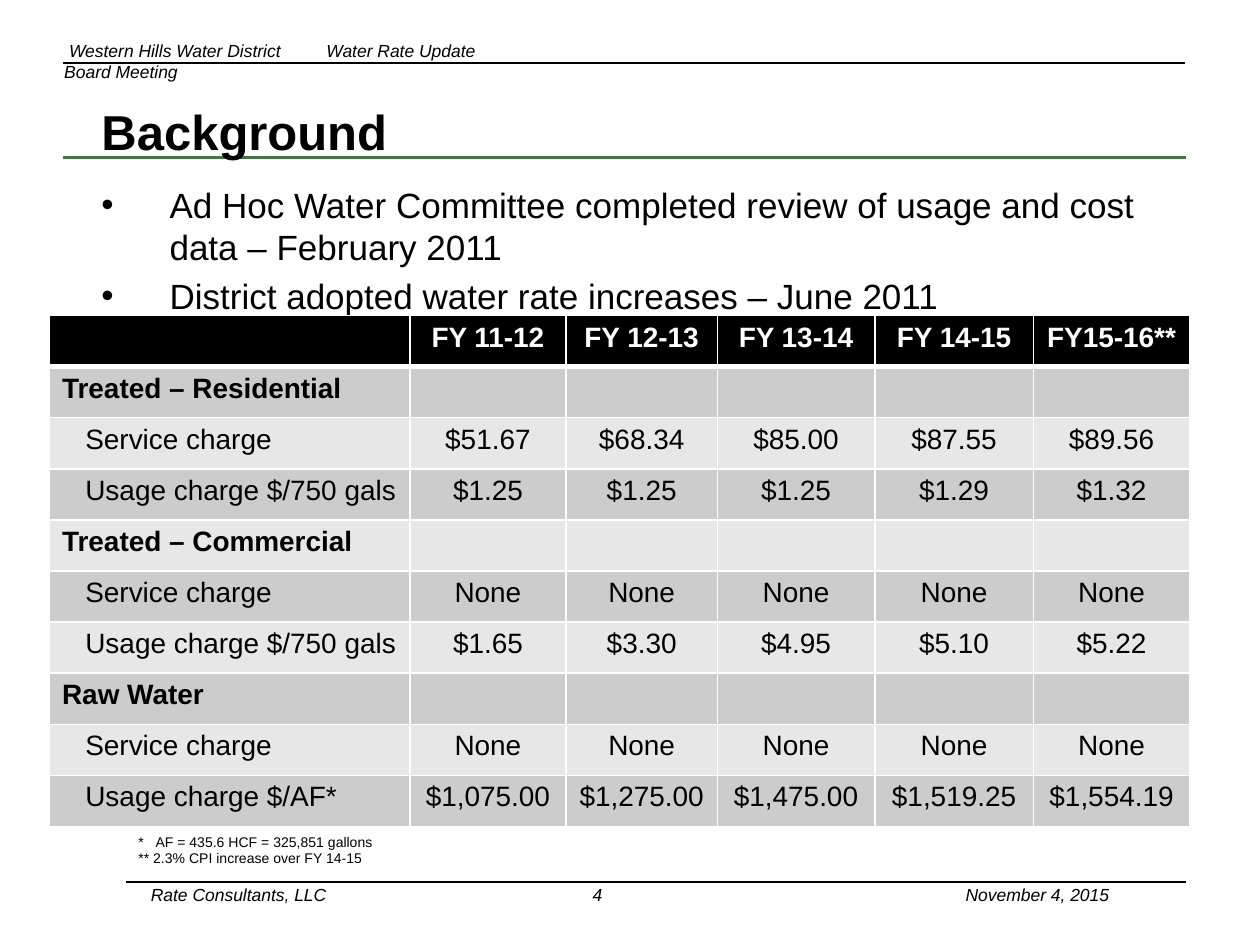
from lxml.etree import SubElement
from pptx import Presentation
from pptx.dml.color import RGBColor
from pptx.enum.shapes import MSO_CONNECTOR
from pptx.enum.text import MSO_ANCHOR, MSO_AUTO_SIZE, PP_ALIGN
from pptx.oxml.ns import qn
from pptx.util import Pt

BLACK, WHITE, GREEN = "000000", "FFFFFF", "487248"
DARK_BAND, LIGHT_BAND = "CCCCCC", "E7E7E7"


def rgb(color):
    return RGBColor.from_string(color)


def write(p, text, size=16, color=BLACK, bold=False, italic=False,
          align=PP_ALIGN.LEFT, before=0, bullet=None, hang=0, tabs=()):
    """Fill one paragraph with formatted text."""
    p.alignment = align
    p.space_before = Pt(before)
    pPr = p._p.get_or_add_pPr()
    if bullet:
        pPr.set("marL", str(Pt(hang)))
        pPr.set("indent", str(-Pt(hang)))
        SubElement(pPr, qn("a:buChar"), char=bullet)
    if tabs:
        tab_list = SubElement(pPr, qn("a:tabLst"))
        for pos in tabs:
            SubElement(tab_list, qn("a:tab"), pos=str(Pt(pos)), algn="l")
    r = p.add_run()
    r.text = text
    r.font.name = "Arial"
    r.font.size = Pt(size)
    r.font.bold = bold
    r.font.italic = italic
    r.font.color.rgb = rgb(color)


class Deck:
    """Holds the presentation, its style and the current slide."""

    def __init__(self, width, height):
        self.prs = Presentation()
        self.prs.slide_width, self.prs.slide_height = Pt(width), Pt(height)
        self.s = None

    def add_slide(self):
        self.s = self.prs.slides.add_slide(self.prs.slide_layouts[1])

    def fill_frame(self, tf, lines, insets, anchor, **fmt):
        tf.word_wrap = True
        tf.auto_size = MSO_AUTO_SIZE.NONE
        tf.vertical_anchor = anchor
        tf.margin_left, tf.margin_top, tf.margin_right, tf.margin_bottom = map(Pt, insets)
        before = fmt.pop("before", 0)
        for i, line in enumerate(lines):
            p = tf.add_paragraph() if i else tf.paragraphs[0]
            write(p, line, before=before if i else 0, **fmt)

    def text(self, box, lines, insets, **fmt):
        sp = self.s.shapes.add_textbox(*map(Pt, box))
        self.fill_frame(sp.text_frame, lines, insets, MSO_ANCHOR.TOP, **fmt)

    def placeholder(self, idx, box, lines, insets, anchor=MSO_ANCHOR.TOP, **fmt):
        sp = self.s.placeholders[idx]
        sp.left, sp.top, sp.width, sp.height = map(Pt, box)
        self.fill_frame(sp.text_frame, lines, insets, anchor, **fmt)
        # Bring in front of the rules already drawn
        sp._element.getparent().append(sp._element)

    def rule(self, left, right, y, color=BLACK, width=0.75):
        line = self.s.shapes.add_connector(
            MSO_CONNECTOR.STRAIGHT, Pt(left), Pt(y), Pt(right), Pt(y))
        line.line.color.rgb = rgb(color)
        line.line.width = Pt(width)
        SubElement(line._element.spPr, qn("a:effectLst"))

    def borders(self, cell, top=1, bottom=1):
        tcPr = cell._tc.get_or_add_tcPr()
        for side, width in (("L", 1), ("R", 1), ("T", top), ("B", bottom)):
            ln = SubElement(tcPr, qn("a:ln" + side), w=str(Pt(width)))
            fill = SubElement(ln, qn("a:solidFill"))
            SubElement(fill, qn("a:srgbClr"), val=WHITE)

    def table(self, left, top, widths, row_height, rows):
        height = row_height * len(rows)
        frame = self.s.shapes.add_table(
            len(rows), len(widths), Pt(left), Pt(top), Pt(sum(widths)), Pt(height))
        table = frame.table
        table.horz_banding = False
        for column, width in zip(table.columns, widths):
            column.width = Pt(width)
        for i, values in enumerate(rows):
            table.rows[i].height = Pt(row_height)
            header, section = i == 0, len(values) == 1
            band = BLACK if header else DARK_BAND if i % 2 else LIGHT_BAND
            for j in range(len(widths)):
                cell = table.cell(i, j)
                self.borders(cell, top=3 if i == 1 else 1, bottom=3 if header else 1)
                cell.fill.solid()
                cell.fill.fore_color.rgb = rgb(band)
                if j == 0 and not header and not section:
                    cell.margin_left, cell.margin_right = Pt(20.5), Pt(2)
                if j < len(values) and values[j]:
                    write(cell.text_frame.paragraphs[0], values[j],
                          color=WHITE if header else BLACK, bold=header or section,
                          align=PP_ALIGN.CENTER if j else PP_ALIGN.LEFT)


def main():
    deck = Deck(720, 540)
    deck.add_slide()

    # Running header and footer with their rules
    deck.text((18, 18, 672, 34.5), [" Western Hills Water District\tWater Rate Update", "Board Meeting"],
              (18.7, 5, 10, 5), size=10, italic=True, tabs=[149.8])
    deck.rule(36, 678, 90, GREEN, 2.25)
    deck.rule(36, 677, 36)
    deck.rule(72, 678, 504)
    deck.text((30, 500, 661, 22), ["Rate Consultants, LLC\t4\tNovember 4, 2015"],
              (56.2, 5, 10, 5), size=10, italic=True, tabs=[252.5, 465.6])

    # Title and bullets
    deck.placeholder(0, (48, 54, 612, 42), ["Background"], (10, 5, 10, 5),
                     anchor=MSO_ANCHOR.MIDDLE, size=28, bold=True)
    deck.placeholder(1, (48, 96, 612, 102), [
        "Ad Hoc Water Committee completed review of usage and cost data – February 2011",
        "District adopted water rate increases – June 2011",
    ], (10, 9, 10, 5), size=20, before=4, bullet="•", hang=38.9)

    # Rate table: a row with one value is a section heading
    no_charge = ["Service charge"] + ["None"] * 5
    deck.table(28.3, 180.3, [205.9, 89.3, 86.4, 90, 90.7, 89.3], 29.2, [
        ["", "FY 11-12", "FY 12-13", "FY 13-14", "FY 14-15", "FY15-16**"],
        ["Treated – Residential"],
        ["Service charge", "$51.67", "$68.34", "$85.00", "$87.55", "$89.56"],
        ["Usage charge $/750 gals", "$1.25", "$1.25", "$1.25", "$1.29", "$1.32"],
        ["Treated – Commercial"],
        no_charge,
        ["Usage charge $/750 gals", "$1.65", "$3.30", "$4.95", "$5.10", "$5.22"],
        ["Raw Water"],
        no_charge,
        ["Usage charge $/AF*", "$1,075.00", "$1,275.00", "$1,475.00", "$1,519.25", "$1,554.19"],
    ])

    # Footnotes
    deck.text((72, 472.5, 534, 39.5), [
        "*\tAF = 435.6 HCF = 325,851 gallons",
        "** 2.3% CPI increase over FY 14-15",
    ], (7.2, 3.6, 7.2, 3.6), size=8, tabs=[9.8])

    deck.prs.save("out.pptx")


if __name__ == "__main__":
    main()
